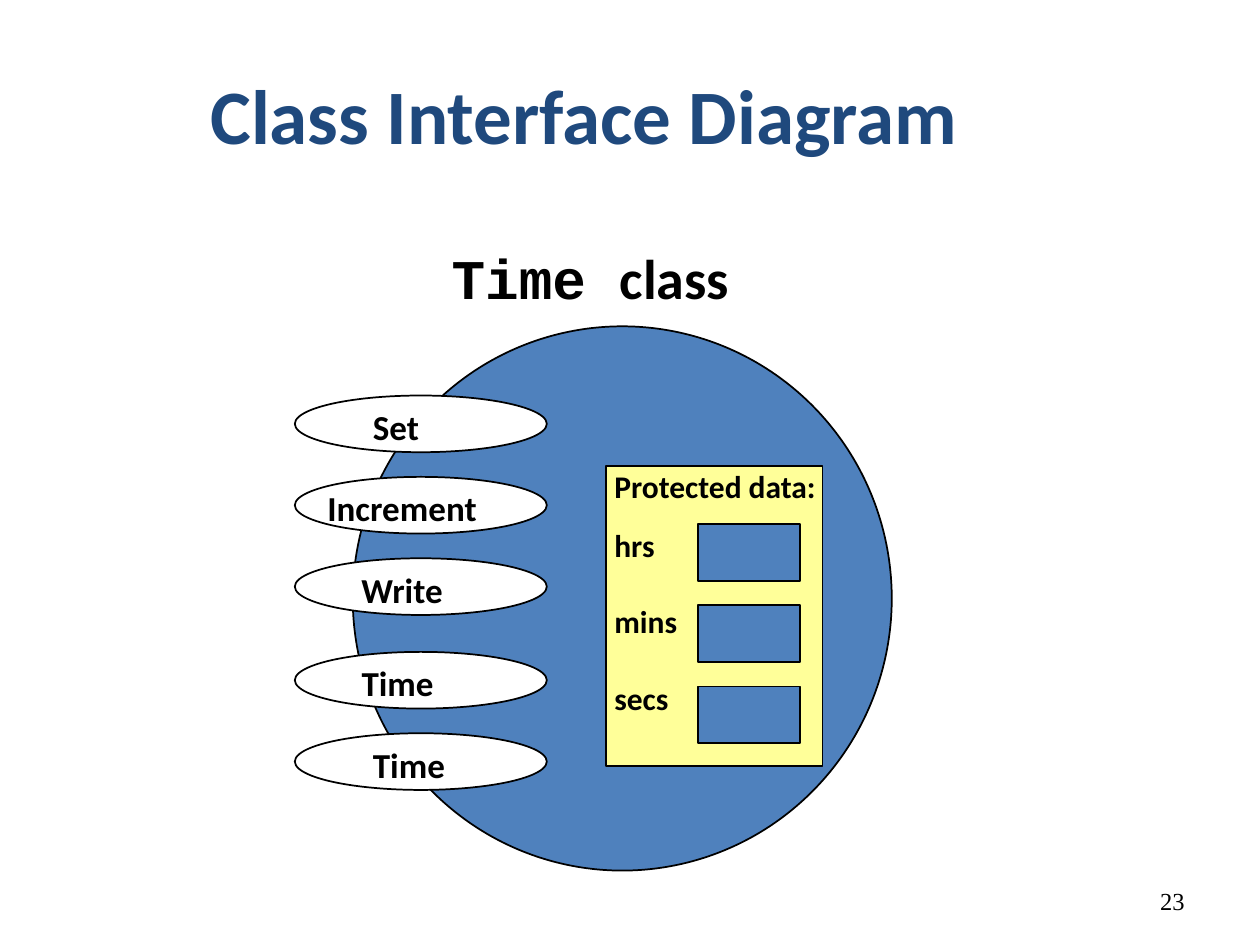
from pptx import Presentation
from pptx.dml.color import RGBColor
from pptx.enum import shapes, text
from pptx.util import Pt

NAVY = RGBColor(0x1F, 0x49, 0x7D)
BLUE = RGBColor(0x4F, 0x81, 0xBD)
YELLOW = RGBColor(0xFF, 0xFF, 0x99)
WHITE = RGBColor(0xFF, 0xFF, 0xFF)
BLACK = RGBColor(0, 0, 0)
OVAL = shapes.MSO_SHAPE.OVAL
RECTANGLE = shapes.MSO_SHAPE.RECTANGLE

deck = Presentation()
deck.slide_width, deck.slide_height = Pt(720), Pt(540)
page = deck.slides.add_slide(deck.slide_layouts.get_by_name("Title Only"))


def add_outlined(kind, left, top, width, height, fill):
    shape = page.shapes.add_shape(kind, Pt(left), Pt(top), Pt(width), Pt(height))
    shape.shadow.inherit = False
    shape.fill.solid()
    shape.fill.fore_color.rgb = fill
    shape.line.color.rgb = BLACK
    shape.line.width = Pt(1)


def add_label(words, left, top, width, height, size, font="Calibri", bold=True):
    box = page.shapes.add_textbox(Pt(left), Pt(top), Pt(width), Pt(height))
    box.text_frame.word_wrap = False
    box.text_frame.text = words
    for para in box.text_frame.paragraphs:
        for span in para.runs:
            span.font.name = font
            span.font.size = Pt(size)
            span.font.bold = bold
            span.font.color.rgb = BLACK
    return box


# Title
title = page.shapes.title
title.left, title.top, title.width, title.height = Pt(113), Pt(35), Pt(474), Pt(60)
frame = title.text_frame
frame.text = "Class Interface Diagram"
frame.word_wrap = False
frame.vertical_anchor = text.MSO_ANCHOR.TOP
para = frame.paragraphs[0]
para.alignment = text.PP_ALIGN.LEFT
font = para.runs[0].font
font.name, font.size, font.bold = "Calibri", Pt(44), True
font.color.rgb = NAVY

# Class circle and its heading
add_outlined(OVAL, 201.6, 186.5, 308, 311, BLUE)
heading = add_label("Time ", 251, 135.5, 200, 45.5, 32, "Courier New")
span = heading.text_frame.paragraphs[0].add_run()
span.text = "class"
span.font.name, span.font.size, span.font.bold = "Calibri", Pt(32), True
span.font.color.rgb = BLACK

# Public operations: name, oval top, label left, label width
operations = [
    ("Set", 226, 206, 41),
    ("Increment", 272.5, 180, 103),
    ("Write", 319, 199.5, 64),
    ("Time", 372.5, 199.5, 59),
    ("Time", 419, 206, 59),
]
for name, top, left, width in operations:
    add_outlined(OVAL, 168.5, top, 144, 32.4, WHITE)
    add_label(name, left, top + 2.2, width, 31, 20)

# Protected data with one cell per field
add_outlined(RECTANGLE, 346.3, 266.4, 123.8, 171.4, YELLOW)
data = add_label("Protected data:\nhrs\nmins\nsecs", 344, 263.5, 133, 149, 18)
for para, gap in zip(data.text_frame.paragraphs, (0, 12, 22, 22)):
    para.space_before = Pt(gap)
for row in range(3):
    add_outlined(RECTANGLE, 398.9, 299.5 + 46.4 * row, 58.3, 32.4, BLUE)

# Page number
number = add_label("23", 516, 500.4, 168, 28.8, 14, "Times New Roman", False)
number.text_frame.vertical_anchor = text.MSO_ANCHOR.MIDDLE
number.text_frame.paragraphs[0].alignment = text.PP_ALIGN.RIGHT
number.text_frame.word_wrap = True

deck.save("out.pptx")
